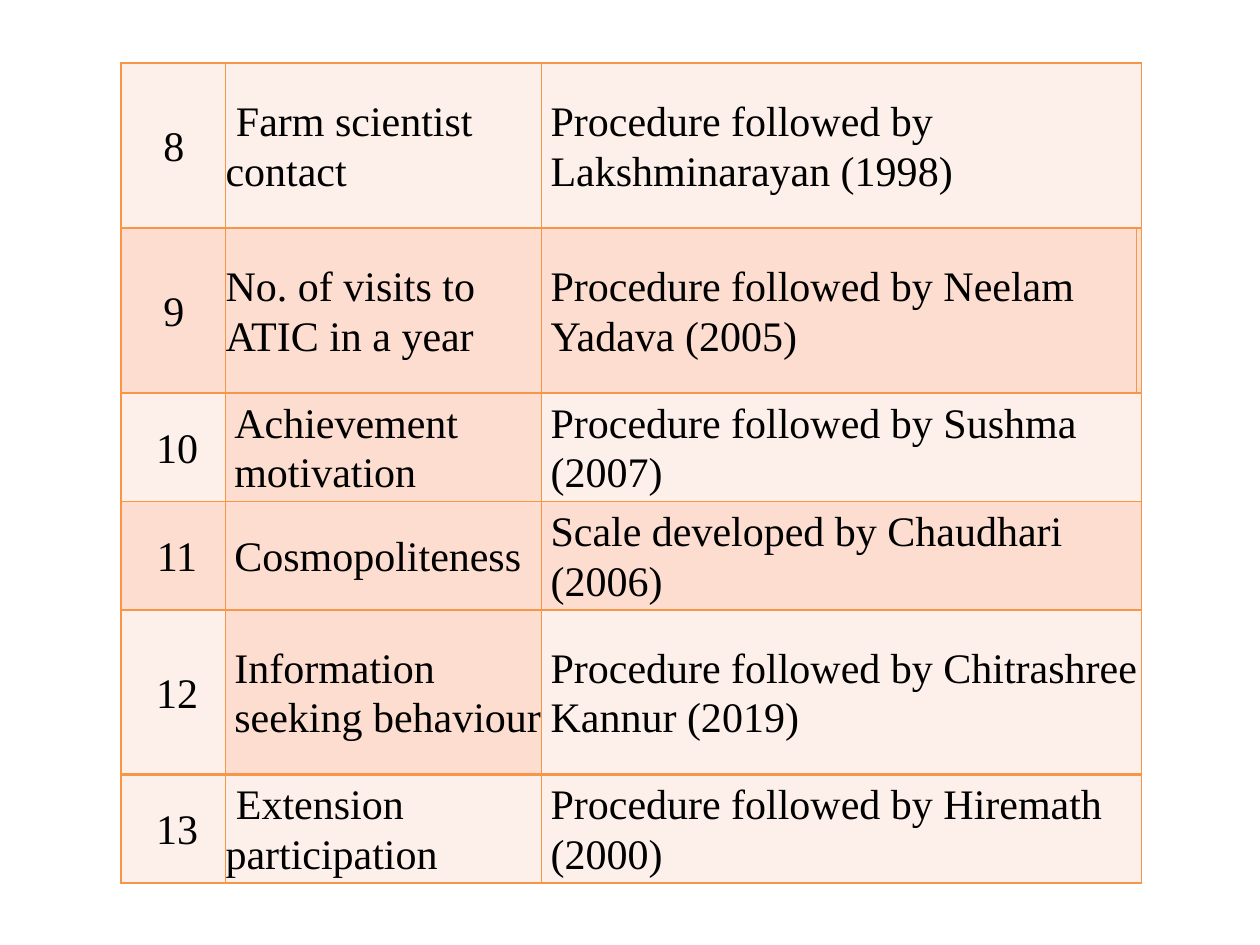
from lxml.etree import SubElement
from pptx import Presentation
from pptx.dml.color import RGBColor as Rgb
from pptx.enum.text import MSO_ANCHOR as Anchor, PP_ALIGN as Align
from pptx.oxml.ns import qn
from pptx.util import Inches, Pt

THEME = {
    "font": "Times New Roman", "size": 24, "text": "000000",
    "light": "FDEFE9", "dark": "FCDDCF", "border": "F79646",
    "thin": 1, "thick": 2,
}

VARIABLES = [
    ("8", " Farm scientist contact", "Procedure followed by Lakshminarayan (1998)"),
    ("9", "No. of visits to ATIC in a year", "Procedure followed by Neelam Yadava (2005)"),
    ("10", "Achievement motivation", "Procedure followed by Sushma (2007)"),
    ("11", "Cosmopoliteness", "Scale developed by Chaudhari (2006)"),
    ("12", "Information seeking behaviour", "Procedure followed by Chitrashree Kannur (2019)"),
    ("13", " Extension participation", "Procedure followed by Hiremath (2000)"),
]
SHADES = [
    ("light", "light", "light"),
    ("dark", "dark", "dark"),
    ("light", "dark", "light"),
    ("dark", "dark", "dark"),
    ("light", "dark", "light"),
    ("light", "light", "light"),
]
COLUMN_WIDTHS = [0.83, 2.51, 4.72, 0.03]
TALL, SHORT = 1.31, 0.86
ROW_HEIGHTS = [TALL, TALL, SHORT, SHORT, TALL, SHORT]
LEFT, TOP = 0.96, 0.5
INDENT = 0.07
UNINDENTED = {"8", "9", "13"}
SPLIT_ROW = 1

CELL_FORMAT = {
    "margin_left": 0, "margin_right": 0, "margin_top": 0, "margin_bottom": 0,
    "vertical_anchor": Anchor.MIDDLE,
}
PARAGRAPH_FORMAT = {"line_spacing": 1.07, "space_before": Pt(1), "space_after": Pt(8)}
FONT_FORMAT = {"name": THEME["font"], "size": Pt(THEME["size"])}


def apply(target, values):
    for key, value in values.items():
        setattr(target, key, value)


def draw_borders(cell, top, bottom):
    properties = cell._tc.get_or_add_tcPr()
    sides = {"lnL": "thin", "lnR": "thin", "lnT": top, "lnB": bottom}
    for position, (side, weight) in enumerate(sides.items()):
        line = SubElement(properties, qn(f"a:{side}"), w=str(Pt(THEME[weight])))
        fill = SubElement(line, qn("a:solidFill"))
        SubElement(fill, qn("a:srgbClr"), val=THEME["border"])
        properties.insert(position, line)


def write(cell, text, alignment, indent):
    paragraph = cell.text_frame.paragraphs[0]
    apply(paragraph, {**PARAGRAPH_FORMAT, "alignment": alignment})
    paragraph._p.get_or_add_pPr().set("marL", str(Inches(indent)))
    run = paragraph.add_run()
    run.text = text
    apply(run.font, FONT_FORMAT)
    run.font.color.rgb = Rgb.from_string(THEME["text"])


def main():
    deck = Presentation()
    apply(deck, {"slide_width": Inches(10), "slide_height": Inches(7.5)})
    slide = deck.slides.add_slide(deck.slide_layouts[6])
    table = slide.shapes.add_table(
        len(VARIABLES), len(COLUMN_WIDTHS), Inches(LEFT), Inches(TOP),
        Inches(sum(COLUMN_WIDTHS)), Inches(sum(ROW_HEIGHTS))).table
    apply(table, {"first_row": False, "horz_banding": False})
    for column, width in zip(table.columns, COLUMN_WIDTHS):
        column.width = Inches(width)
    for row, height in zip(table.rows, ROW_HEIGHTS):
        row.height = Inches(height)

    last = len(VARIABLES) - 1
    for index, (entry, shades) in enumerate(zip(VARIABLES, SHADES)):
        number = entry[0]
        cells = table.rows[index].cells
        top = "thick" if index == last else "thin"
        bottom = "thick" if index == last - 1 else "thin"
        for cell, shade in zip(cells, shades + shades[-1:]):
            apply(cell, CELL_FORMAT)
            cell.fill.solid()
            cell.fill.fore_color.rgb = Rgb.from_string(THEME[shade])
            draw_borders(cell, top, bottom)
        if index != SPLIT_ROW:
            table.cell(index, 2).merge(table.cell(index, 3))
        layout = [
            (Align.CENTER, 0.01 if index < 2 else 0.06),
            (Align.LEFT, 0 if number in UNINDENTED else INDENT),
            (Align.LEFT, INDENT),
        ]
        for column, (text, (alignment, indent)) in enumerate(zip(entry, layout)):
            write(table.cell(index, column), text, alignment, indent)

    deck.save("out.pptx")


if __name__ == "__main__":
    main()
